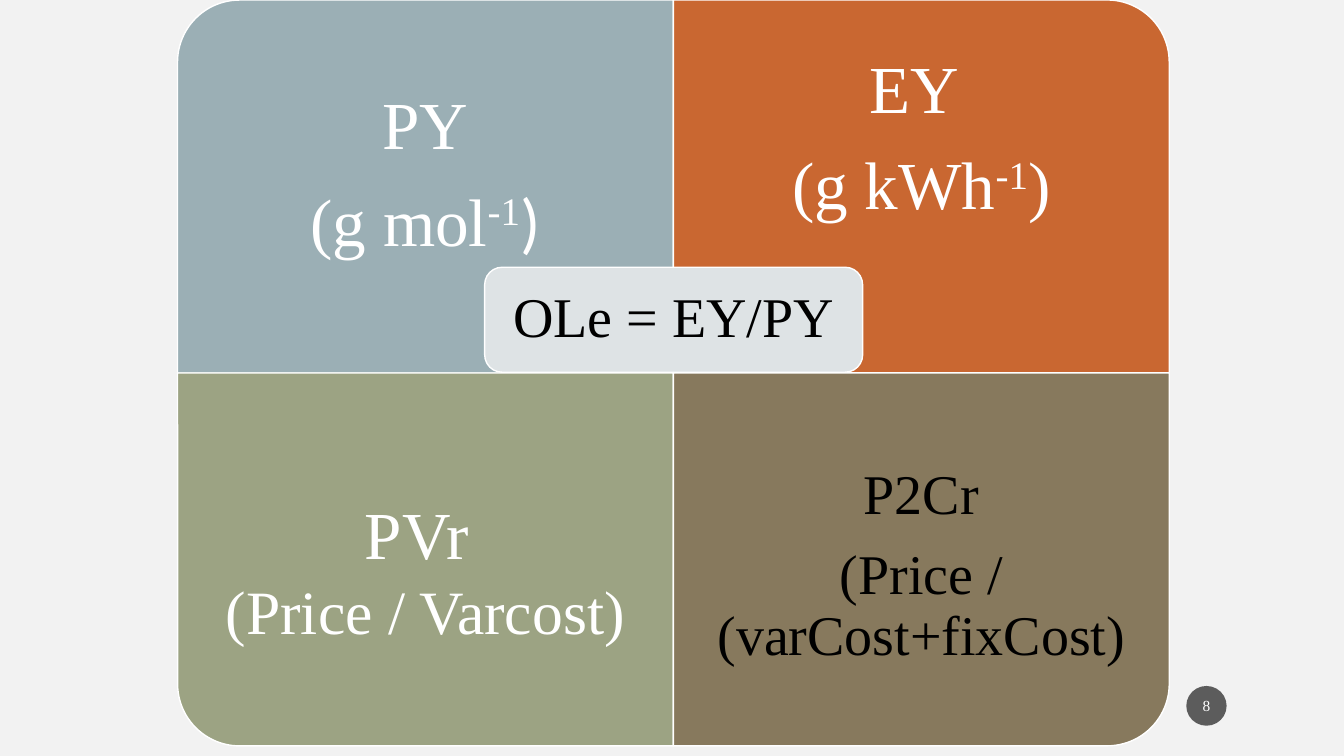
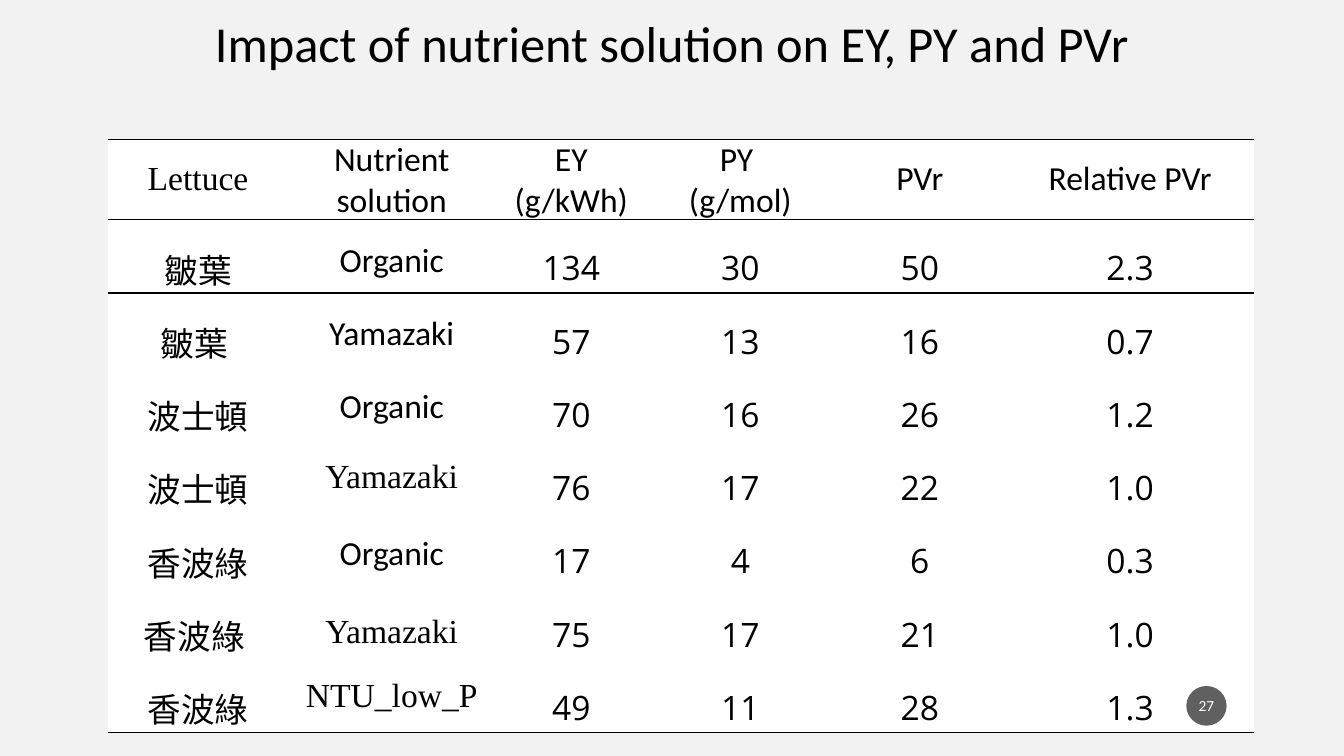
from lxml import etree
from pptx import Presentation
from pptx.dml.color import RGBColor
from pptx.enum import shapes, text
from pptx.oxml import ns
from pptx.util import Pt

COLORS = {
    "page": "F2F2F2", "white": "FFFFFF", "black": "000000", "badge": "1D1D1D",
    "blue": "9BAFB5", "orange": "C96731", "green": "9CA383", "brown": "87795D",
    "pale": "DEE3E5",
}
SERIF, SANS, DIGITS = "Times New Roman", "Calibri", "Open Sans"
SLIDE_W, SLIDE_H = 960, 540

# Quadrants: column, row, rotation, fill, text colour, inset, text shift, paragraphs.
# A paragraph is (line spacing, space after, runs); a run is (text, size, font, raised).
QUADRANTS = [
    (0, 0, 270, "blue", "white", 26.6, 26, [
        (0.9, 16.8, [("PY", 48, SERIF, False)]),
        (0.9, 0, [("(g mol", 48, SERIF, False), ("-1", 48, SERIF, True),
                  (")", 48, SANS, False)])]),
    (1, 0, 0, "orange", "white", 26.6, 0, [
        (0.9, 16.8, [("EY ", 48, SERIF, False)]),
        (0.9, 0, [("(g kWh", 48, SERIF, False), ("-1", 48, SERIF, True),
                  (")", 48, SERIF, False)])]),
    (0, 1, 180, "green", "white", 26.6, -26, [
        (1, 0, [("PVr ", 48, SERIF, False)]),
        (1, 0, [("(Price / Varcost)", 44, SERIF, False)])]),
    (1, 1, 90, "brown", "black", 22.3, -28, [
        (0.9, 14, [("P2Cr", 40, SERIF, False)]),
        (0.9, 0, [("(Price / (varCost+fixCost)", 40, SERIF, False)])]),
]
FORMULA = [(0.9, 0, [("OLe = EY/PY", 40, SERIF, False)])]
GRID_X, QUAD_W, QUAD_H = 126.8, 354.2, 266.4

TITLE = [(1, 0, [("Impact of nutrient solution on EY, PY and PVr", 36, SANS, False)])]
HEADER = ["Lettuce", "Nutrient solution", "EY\n(g/kWh)", "PY \n(g/mol)", "PVr", "Relative PVr"]
# Cultivar, solution, font of the solution, then the measured values.
TRIALS = [
    ("皺葉", "Organic", SANS, "134", "30", "50", "2.3"),
    ("皺葉 ", "Yamazaki", SANS, "57", "13", "16", "0.7"),
    ("波士頓", "Organic", SANS, "70", "16", "26", "1.2"),
    ("波士頓", "Yamazaki", SERIF, "76", "17", "22", "1.0"),
    ("香波綠", "Organic", SANS, "17", "4", "6", "0.3"),
    ("香波綠 ", "Yamazaki", SERIF, "75", "17", "21", "1.0"),
    ("香波綠", "NTU_low_P", SERIF, "49", "11", "28", "1.3"),
]
CENTRED_SOLUTION_ROW = 6
COL_WIDTHS = [129, 147.7, 108.9, 132.6, 123.9, 176.5]
HEADER_H, TRIAL_H = 57, 52.3
RULED_ABOVE = {0, 1}
RULED_BELOW = {0, len(TRIALS)}
NO_STYLE = "{2D5ABB26-0587-4C30-8999-92F81FD0307C}"


def rgb(name):
    return RGBColor.from_string(COLORS[name])


def fill_text(tf, paragraphs, color):
    tf.word_wrap = True
    for i, (spacing, after, runs) in enumerate(paragraphs):
        p = tf.paragraphs[0] if i == 0 else tf.add_paragraph()
        p.alignment = text.PP_ALIGN.CENTER
        p.line_spacing, p.space_after = spacing, Pt(after)
        for words, size, font, raised in runs:
            for k, line in enumerate(words.split("\n")):
                if k:
                    p.add_line_break()
                r = p.add_run()
                r.text = line
                r.font.size, r.font.name = Pt(size), font
                r.font.color.rgb = rgb(color)
                if raised:
                    r.font._element.set("baseline", "30000")


def set_margins(box, x, y):
    box.margin_left = box.margin_right = Pt(x)
    box.margin_top = box.margin_bottom = Pt(y)


def add_shape(s, kind, x, y, w, h, fill, line=None):
    sp = s.shapes.add_shape(kind, Pt(x), Pt(y), Pt(w), Pt(h))
    sp.shadow.inherit = False
    sp.fill.solid()
    sp.fill.fore_color.rgb = rgb(fill)
    if line:
        sp.line.color.rgb = rgb(line)
        sp.line.width = Pt(1)
    else:
        sp.line.fill.background()
    return sp


def add_text(s, x, y, w, h, paragraphs, color, inset):
    tf = s.shapes.add_textbox(Pt(x), Pt(y), Pt(w), Pt(h)).text_frame
    tf.vertical_anchor = text.MSO_ANCHOR.MIDDLE
    set_margins(tf, inset, inset)
    fill_text(tf, paragraphs, color)


def add_page_number(s, number, font):
    sp = add_shape(s, shapes.MSO_SHAPE.OVAL, 847.4, 490, 28.8, 28.4, "badge")
    color = sp.fill._xPr.find(".//" + ns.qn("a:srgbClr"))
    etree.SubElement(color, ns.qn("a:alpha"), val="70000")
    tf = sp.text_frame
    tf.vertical_anchor = text.MSO_ANCHOR.MIDDLE
    set_margins(tf, 1.4, 3.6)
    fill_text(tf, [(1, 0, [(number, 11, font, False)])], "white")


def add_rule(cell, side):
    """Draw a black line on one side of a cell: lnT or lnB."""
    ln = etree.SubElement(cell._tc.get_or_add_tcPr(), ns.qn("a:" + side), w=str(Pt(1)))
    solid = etree.SubElement(ln, ns.qn("a:solidFill"))
    etree.SubElement(solid, ns.qn("a:srgbClr"), val=COLORS["black"])


def build_quadrants(s):
    for col, row, rotation, fill, color, inset, shift, paragraphs in QUADRANTS:
        x, y = GRID_X + col * QUAD_W, row * QUAD_H
        w, h = (QUAD_H, QUAD_W) if rotation % 180 else (QUAD_W, QUAD_H)
        sp = add_shape(s, shapes.MSO_SHAPE.ROUND_1_RECTANGLE, x + (QUAD_W - w) / 2,
                       y + (QUAD_H - h) / 2, w, h, fill, "white")
        sp.rotation = rotation
        add_text(s, x, y + row * QUAD_H / 4 + shift, QUAD_W, QUAD_H * 0.75,
                 paragraphs, color, inset)
    box = (346.2, 190.9, 270, 75)
    add_shape(s, shapes.MSO_SHAPE.ROUNDED_RECTANGLE, *box, "pale", "white")
    add_text(s, *box, FORMULA, "black", 12)


def build_trials(s):
    frame = s.shapes.add_table(len(TRIALS) + 1, len(HEADER), Pt(77), Pt(99.4),
                               Pt(sum(COL_WIDTHS)), Pt(HEADER_H + len(TRIALS) * TRIAL_H))
    table = frame.table
    table.first_row = table.horz_banding = False
    table._tbl.tblPr.find(ns.qn("a:tableStyleId")).text = NO_STYLE
    for column, width in zip(table.columns, COL_WIDTHS):
        column.width = Pt(width)

    rows = [(HEADER, [SERIF] + [SANS] * 5)]
    for cultivar, solution, font, *values in TRIALS:
        rows.append(([cultivar, solution, *values], [SANS, font] + [DIGITS] * 4))
    for i, (words, fonts) in enumerate(rows):
        table.rows[i].height = Pt(TRIAL_H if i else HEADER_H)
        for j, (word, font) in enumerate(zip(words, fonts)):
            cell = table.cell(i, j)
            top = j == 1 and i not in (0, CENTRED_SOLUTION_ROW)
            cell.vertical_anchor = text.MSO_ANCHOR.TOP if top else text.MSO_ANCHOR.MIDDLE
            set_margins(cell, 1.4, 0)
            fill_text(cell.text_frame,
                      [(1.5 if i else 1, 0, [(word, 24, font, False)])], "black")
            if i in RULED_ABOVE:
                add_rule(cell, "lnT")
            if i in RULED_BELOW:
                add_rule(cell, "lnB")
            cell.fill.solid()
            cell.fill.fore_color.rgb = rgb("white")


def main():
    prs = Presentation()
    prs.slide_width, prs.slide_height = Pt(SLIDE_W), Pt(SLIDE_H)
    background = prs.slide_master.background.fill
    background.solid()
    background.fore_color.rgb = rgb("page")
    blank = prs.slide_layouts[6]

    s = prs.slides.add_slide(blank)
    build_quadrants(s)
    add_page_number(s, "8", SERIF)

    s = prs.slides.add_slide(blank)
    build_trials(s)
    add_page_number(s, "27", SANS)
    add_text(s, 0, 5, SLIDE_W, 51, TITLE, "black", 3.6)
    prs.save("out.pptx")


if __name__ == "__main__":
    main()
